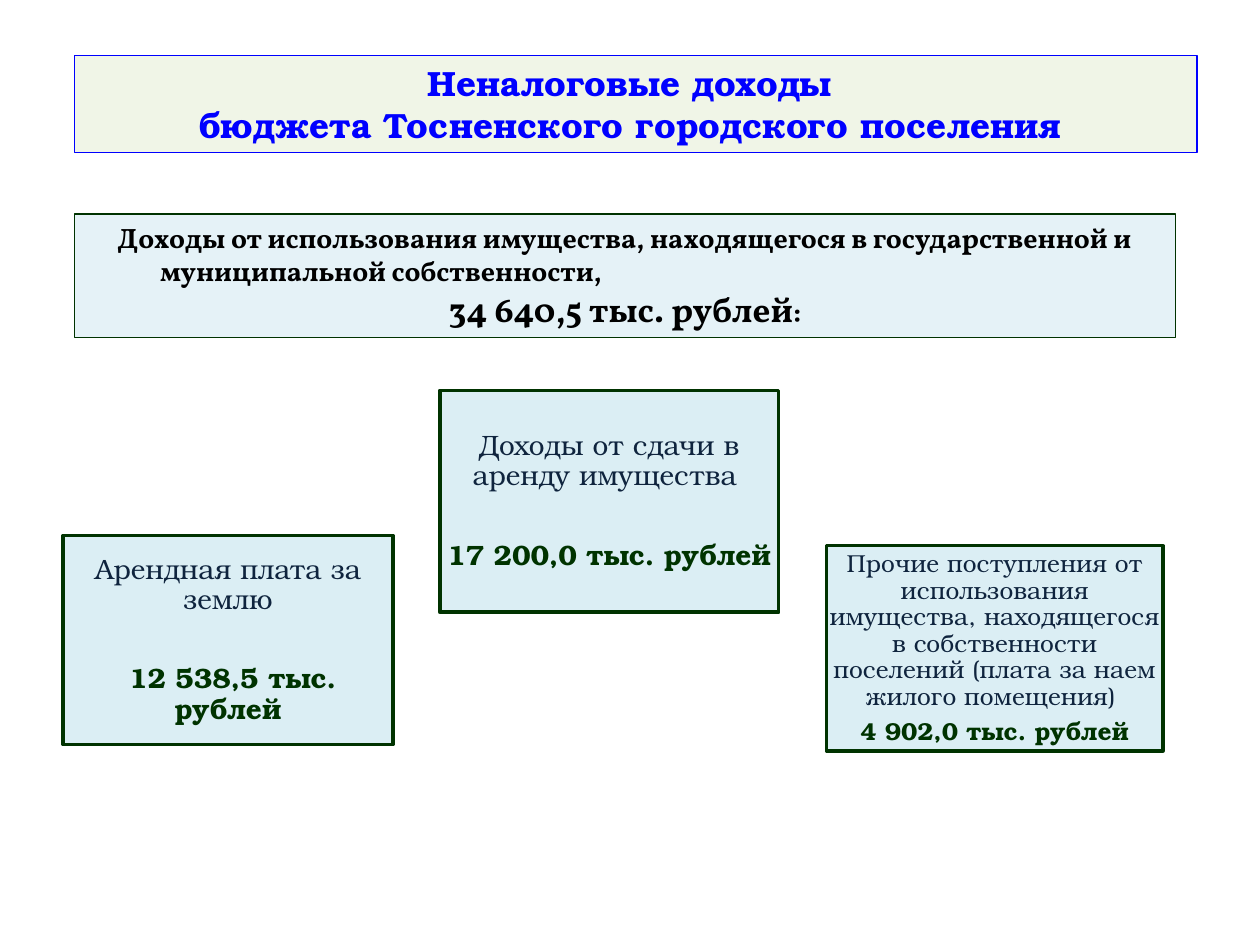
import pptx
import pptx.dml.color
import pptx.enum.shapes
import pptx.enum.text
import pptx.oxml
import pptx.oxml.ns
import pptx.util

Pt = pptx.util.Pt
ALIGN = pptx.enum.text.PP_ALIGN
ANCHOR = pptx.enum.text.MSO_ANCHOR
BONUM = "TeX Gyre Bonum"
VOLLKORN = "Vollkorn"
GREEN = "003300"
PALE_BLUE = "DBEEF4"

CARDS = [
    ((36, 306, 188.6, 119.5), 16, 28.3,
     "Арендная плата за землю", " 12 538,5 тыс. рублей"),
    ((251.3, 223.2, 193.7, 126.7), 16, 28.3,
     "Доходы от сдачи в аренду имущества ", "17 200,0 тыс. рублей"),
    ((472.3, 311.8, 192.2, 117.4), 14, 4.9,
     "Прочие поступления от использования имущества, находящегося в "
     "собственности поселений (плата за наем жилого помещения) ",
     "4 902,0 тыс. рублей"),
]


def colour(value):
    """Turn a hex string into a colour."""
    return pptx.dml.color.RGBColor.from_string(value)


def style_box(box, fill, line, width, opacity=100):
    """Give a box its fill, opacity and outline."""
    box.fill.solid()
    box.fill.fore_color.rgb = colour(fill)
    if opacity < 100:
        shade = box.fill._xPr.find(".//" + pptx.oxml.ns.qn("a:srgbClr"))
        alpha = pptx.oxml.parse_xml(
            f'<a:alpha {pptx.oxml.ns.nsdecls("a")} val="{opacity * 1000}"/>')
        shade.append(alpha)
    box.line.color.rgb = colour(line)
    box.line.width = Pt(width)


def style_font(font, name, size, value, bold):
    """Set the face, size, colour and weight of a font."""
    font.name = name
    font.size = Pt(size)
    font.color.rgb = colour(value)
    font.bold = bold


def add_box(page, place):
    """Add a rectangle without shadow whose text wraps."""
    box = page.shapes.add_shape(
        pptx.enum.shapes.MSO_SHAPE.RECTANGLE, *map(Pt, place))
    box.shadow.inherit = False
    box.text_frame.word_wrap = True
    return box


def add_title(page):
    """Place the heading in the title placeholder."""
    title = page.shapes.title
    title.left, title.top, title.width, title.height = map(
        Pt, (42.5, 31.7, 641.5, 55.4))
    style_box(title, "EBF1DE", "0000FF", 0.75, 71)
    frame = title.text_frame
    frame.auto_size = pptx.enum.text.MSO_AUTO_SIZE.NONE
    frame.vertical_anchor = ANCHOR.MIDDLE
    para = frame.paragraphs[0]
    para.text = "Неналоговые доходы \vбюджета Тосненского городского поселения "
    para.alignment = ALIGN.CENTER
    style_font(para.font, BONUM, 20, "0000FF", True)


def add_summary(page):
    """Add the banner with the total property income."""
    box = add_box(page, (42.5, 122.3, 629.3, 70.5))
    style_box(box, PALE_BLUE, GREEN, 0.75, 71)
    frame = box.text_frame
    frame.vertical_anchor = ANCHOR.TOP
    source = frame.paragraphs[0]
    source.text = ("Доходы от использования имущества, находящегося в "
                   "государственной и муниципальной собственности,")
    source.alignment = ALIGN.LEFT
    properties = source._p.get_or_add_pPr()
    properties.set("marL", str(Pt(42)))
    properties.set("indent", str(Pt(-24.5)))
    style_font(source.font, VOLLKORN, 16, "000000", True)
    total = frame.add_paragraph()
    total.alignment = ALIGN.CENTER
    for text, size in (("34 640,5 тыс. рублей", 20), (":", 16)):
        span = total.add_run()
        span.text = text
        style_font(span.font, VOLLKORN, size, "000000", True)


def add_card(page, place, size, gap, label, amount):
    """Add a card with an income source and its amount."""
    box = add_box(page, place)
    style_box(box, PALE_BLUE, GREEN, 2)
    frame = box.text_frame
    frame.vertical_anchor = ANCHOR.MIDDLE
    frame.margin_left = frame.margin_right = Pt(0.72)
    frame.margin_top = frame.margin_bottom = Pt(0.72)
    heading, value = frame.paragraphs[0], frame.add_paragraph()
    heading.text, value.text = label, amount
    for para in (heading, value):
        para.alignment = ALIGN.CENTER
        para.line_spacing = 0.9
    heading.space_after = Pt(gap)
    style_font(heading.font, BONUM, size, "0F243E", False)
    style_font(value.font, BONUM, size, GREEN, True)


def main():
    """Build the slide and save it."""
    deck = pptx.Presentation()
    deck.slide_width, deck.slide_height = Pt(720), Pt(540)
    page = deck.slides.add_slide(deck.slide_layouts[5])
    add_title(page)
    add_summary(page)
    for card in CARDS:
        add_card(page, *card)
    deck.save("out.pptx")


if __name__ == "__main__":
    main()
